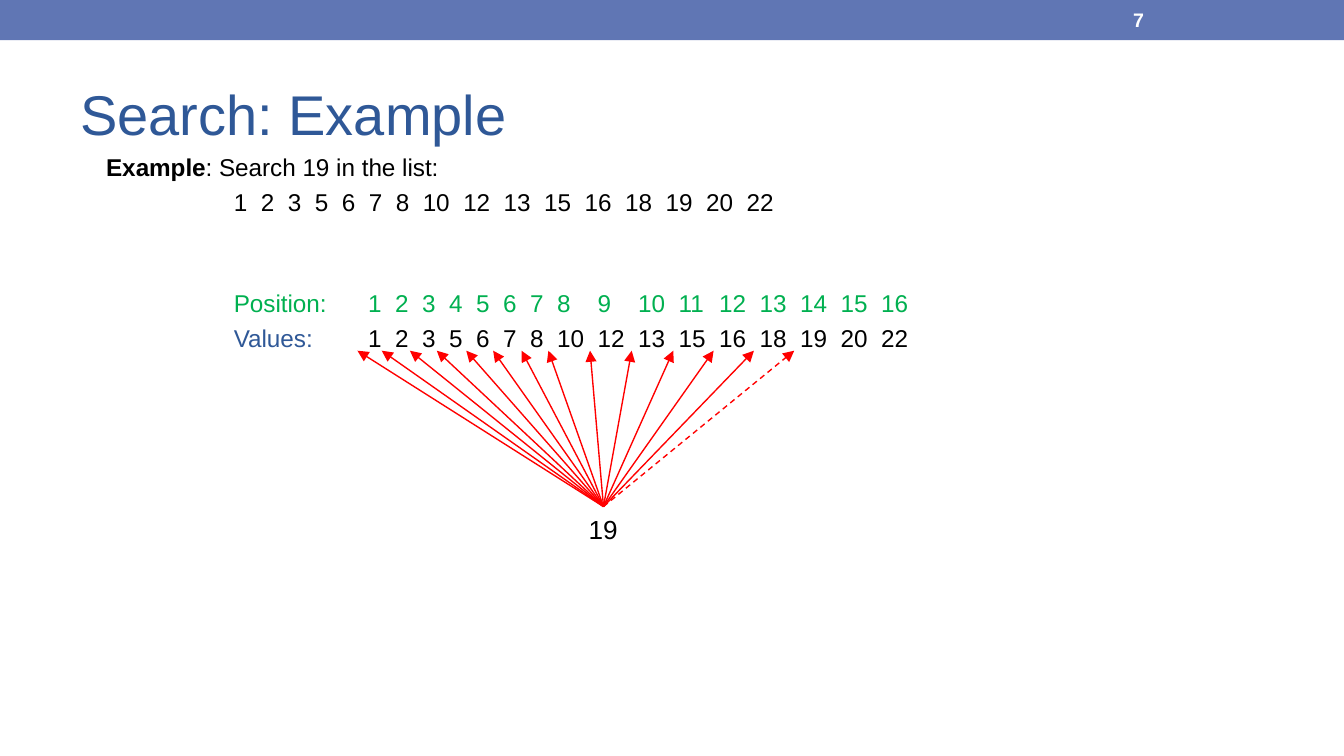
from dataclasses import dataclass
from itertools import accumulate

from lxml.etree import SubElement
from pptx import Presentation
from pptx.dml.color import RGBColor
from pptx.enum.dml import MSO_LINE
from pptx.enum.shapes import MSO_CONNECTOR, MSO_SHAPE
from pptx.enum.text import MSO_ANCHOR
from pptx.oxml.ns import qn
from pptx.util import Pt


@dataclass(frozen=True)
class Theme:
    font: str = "Arial"
    bar: str = "6076B4"
    title: str = "2F5897"
    text: str = "000000"
    position: str = "00B050"
    arrow: str = "FF0000"
    light: str = "FFFFFF"
    title_size: float = 30
    body_size: float = 13
    target_size: float = 14
    number_size: float = 10.5


T = Theme()
VALUES = [1, 2, 3, 5, 6, 7, 8, 10, 12, 13, 15, 16, 18, 19, 20, 22]
TARGET = 19
DIGIT, GAP = 7.23, 7.23  # width of a digit and of the gap between numbers
LABEL_X, NUMBERS_X = 68.4, 140.4
TIPS = [0, 13, 28.1, 42.5, 58.3, 72.7, 87.9, 102.3,
        124.6, 146.9, 169.2, 190.8, 212.4, 234]


def add_text_box(s, box, inset=(7.2, 3.6), **formats):
    sp = s.shapes.add_textbox(*map(Pt, box))
    tf = sp.text_frame
    x, y = map(Pt, inset)
    frame = dict(margin_left=x, margin_right=x, margin_top=y, margin_bottom=y,
                 word_wrap=True) | formats
    for name, value in frame.items():
        setattr(tf, name, value)
    return tf


def add_run(p, text, size, color, bold=False):
    r = p.add_run()
    r.text = text
    for name, value in dict(name=T.font, size=Pt(size), bold=bold).items():
        setattr(r.font, name, value)
    r.font.color.rgb = RGBColor.from_string(color)


def set_tabs(p, stops):
    tabs = SubElement(p._p.get_or_add_pPr(), qn("a:tabLst"))
    for x in stops:
        SubElement(tabs, qn("a:tab"), pos=str(Pt(x)), algn="l")


def column_stops(start):
    """Left edge of each number, spaced by the width of the values."""
    widths = [DIGIT * len(str(v)) + GAP for v in VALUES[:-1]]
    return list(accumulate(widths, initial=start))


def tabbed(items):
    return "".join(f"\t{item}" for item in items)


def header(s, x, y, w, h):
    sp = s.shapes.add_shape(MSO_SHAPE.RECTANGLE, *map(Pt, (x, y, w, h)))
    sp.shadow.inherit = False
    sp.fill.solid()
    sp.fill.fore_color.rgb = RGBColor.from_string(T.bar)
    sp.line.fill.background()
    # Slide number
    tf = add_text_box(s, (x + 600, y + 0.7, 84, 19.4),
                      vertical_anchor=MSO_ANCHOR.MIDDLE)
    add_run(tf.paragraphs[0], "7", T.number_size, T.light, True)


def title(s, *box):
    tf = add_text_box(s, box, vertical_anchor=MSO_ANCHOR.MIDDLE)
    add_run(tf.paragraphs[0], "Search: Example", T.title_size, T.title)


def number_lists(s, *box):
    tf = add_text_box(s, box, inset=(0, 0))
    columns = [LABEL_X] + column_stops(NUMBERS_X)
    # Each row: space before, tab stops, runs
    rows = [
        (0, [], [("Example", T.text, True),
                 (": Search 19 in the list:", T.text)]),
        (2.9, column_stops(LABEL_X), [(tabbed(VALUES), T.text)]),
        (38.6, columns, [("\tPosition:", T.position),
                         (tabbed(range(1, len(VALUES) + 1)), T.position)]),
        (2.9, columns, [("\tValues:", T.title), (tabbed(VALUES), T.text)]),
    ]
    for i, (space, stops, runs) in enumerate(rows):
        p = tf.add_paragraph() if i else tf.paragraphs[0]
        p.space_before = Pt(space)
        if stops:
            set_tabs(p, stops)
        for text, color, *bold in runs:
            add_run(p, text, T.body_size, color, *bold)


def add_arrow(s, start, end, dashed):
    c = s.shapes.add_connector(MSO_CONNECTOR.STRAIGHT, *map(Pt, start + end))
    c.line.width = Pt(0.75)
    c.line.color.rgb = RGBColor.from_string(T.arrow)
    if dashed:
        c.line.dash_style = MSO_LINE.DASH
    SubElement(c.line._get_or_add_ln(), qn("a:tailEnd"), type="triangle")
    SubElement(c._element.spPr, qn("a:effectLst"))


def search_arrows(s, x, y, w, h):
    start = (x + 131.8, y + h)
    # Target value
    tf = add_text_box(s, (start[0] - 15.1, start[1], 30.2, 24.5),
                      word_wrap=False)
    add_run(tf.paragraphs[0], str(TARGET), T.target_size, T.text)
    # One arrow per comparison; the match is dashed
    for tip, value in zip(TIPS, VALUES):
        add_arrow(s, start, (x + tip, y), value == TARGET)


def main():
    prs = Presentation()
    prs.slide_width, prs.slide_height = Pt(720), Pt(405)
    s = prs.slides.add_slide(prs.slide_layouts[6])
    header(s, 0, 0, 720, 21.6)
    title(s, 36, 31.7, 648, 58.3)
    number_lists(s, 56.9, 81.8, 620, 305)
    search_arrows(s, 191.5, 187.9, 234, 83.5)
    prs.save("out.pptx")


if __name__ == "__main__":
    main()
